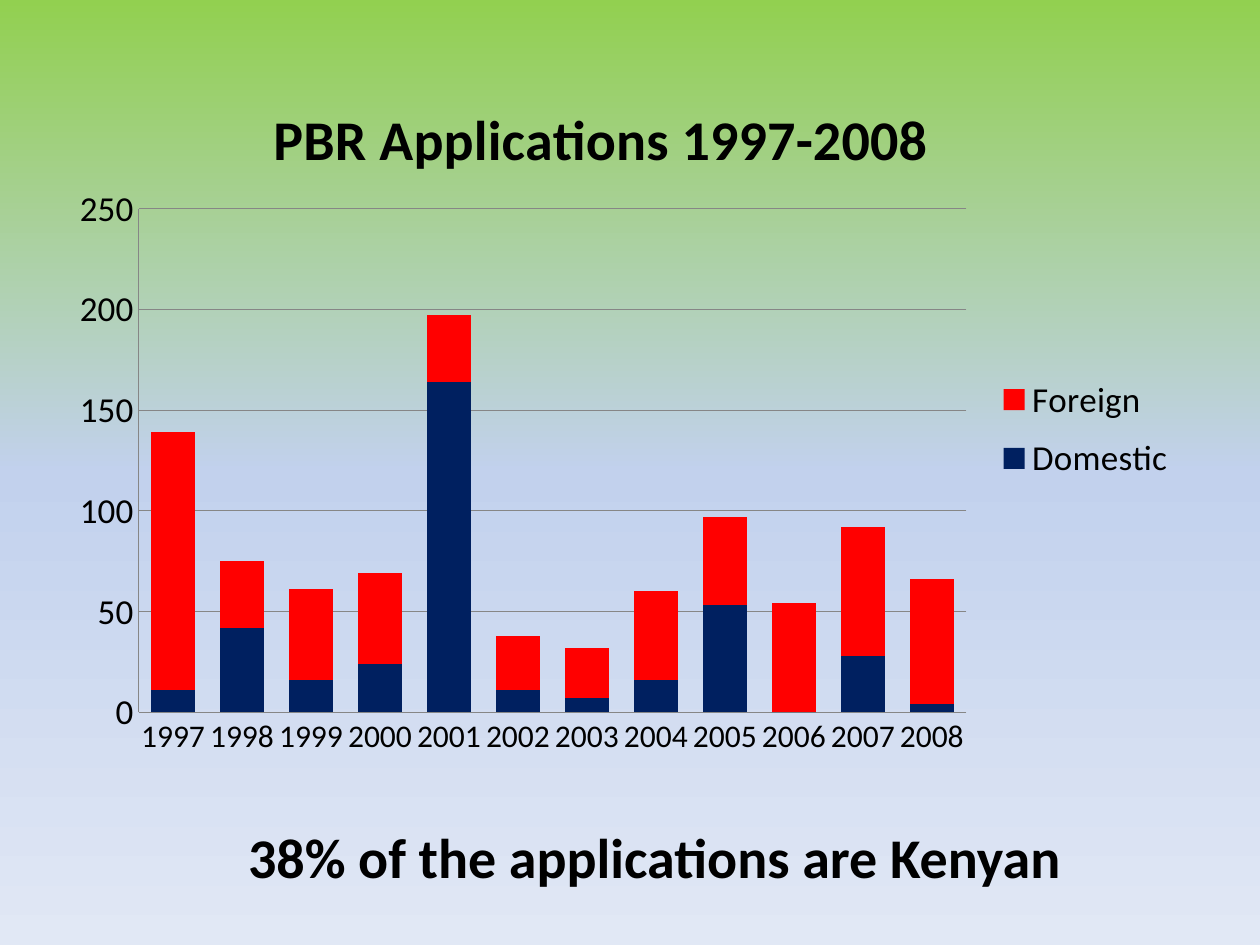
import copy
import pptx
import pptx.chart.data
import pptx.dml.color
import pptx.enum.chart
import pptx.enum.text
import pptx.oxml
import pptx.oxml.ns
import pptx.util

WIDTH, HEIGHT = 10, 7.5
FONT = "Calibri"
COLORS = {"text": "000000", "line": "868686", "Domestic": "002060", "Foreign": "FF0000"}
BACKGROUND = [(0, "92D050"), (0.5, "C2D1ED"), (1, "E1E8F5")]
TITLE = "PBR Applications 1997-2008"
CAPTION = "38% of the applications are Kenyan"
YEARS = [str(year) for year in range(1997, 2009)]
SERIES = {
    "Domestic": [11, 42, 16, 24, 164, 11, 7, 16, 53, 0, 28, 4],
    "Foreign": [128, 33, 45, 45, 33, 27, 25, 44, 44, 54, 64, 62],
}
CHART_BOX = (0.047, 0.073, 0.9, 0.74)
CAPTION_BOX = (0.187, 0.864, 0.671, 0.085)
PLOT_SHARE = {"x": 0.07, "y": 0.2, "w": 0.73, "h": 0.72}
TITLE_SHARE = {"x": 0.18, "y": 0.03}
LEGEND_SHARE = {"x": 0.82, "y": 0.42, "w": 0.17, "h": 0.19}


def rgb(name):
    return pptx.dml.color.RGBColor.from_string(COLORS.get(name, name))


def place(box):
    return [pptx.util.Inches(share * side) for share, side in zip(box, (WIDTH, HEIGHT) * 2)]


def format_font(font, size, bold=False):
    values = {"name": FONT, "size": pptx.util.Pt(size), "bold": bold}
    for attribute, value in values.items():
        setattr(font, attribute, value)
    font.color.rgb = rgb("text")


def set_layout(element, index, shares, inner=False):
    for old in element.findall(pptx.oxml.ns.qn("c:layout")):
        element.remove(old)
    target = '<c:layoutTarget val="inner"/>' if inner else ""
    modes = "".join(f'<c:{key}Mode val="edge"/>' for key in ("x", "y"))
    values = "".join(f'<c:{key} val="{value}"/>' for key, value in shares.items())
    element.insert(index, pptx.oxml.parse_xml(
        f'<c:layout {pptx.oxml.ns.nsdecls("c")}><c:manualLayout>'
        f"{target}{modes}{values}</c:manualLayout></c:layout>"))


def paint_background(slide):
    fill = slide.background.fill
    fill.gradient()
    fill.gradient_angle = 270
    stops = slide.background._cSld.find(".//" + pptx.oxml.ns.qn("a:gsLst"))
    stops.insert(1, copy.deepcopy(stops[0]))
    for stop, (position, color) in zip(fill.gradient_stops, BACKGROUND):
        stop.position = position
        stop.color.rgb = rgb(color)


def add_applications_chart(slide):
    data = pptx.chart.data.CategoryChartData()
    data.categories = YEARS
    for name, values in SERIES.items():
        data.add_series(name, values)
    chart = slide.shapes.add_chart(
        pptx.enum.chart.XL_CHART_TYPE.COLUMN_STACKED, *place(CHART_BOX), data).chart
    format_font(chart.font, 10)

    title_frame = chart.chart_title.text_frame
    title_frame.text = TITLE
    format_font(title_frame.paragraphs[0].runs[0].font, 32, True)
    chart.chart_title.include_text_in_layout = False

    chart.has_legend = True
    chart.legend.position = pptx.enum.chart.XL_LEGEND_POSITION.RIGHT
    chart.legend.include_in_layout = False
    format_font(chart.legend.font, 20)

    for axis, size in ((chart.category_axis, 18), (chart.value_axis, 20)):
        axis.major_tick_mark = pptx.enum.chart.XL_TICK_MARK.NONE
        axis.format.line.color.rgb = rgb("line")
        axis.format.line.width = pptx.util.Pt(0.75)
        format_font(axis.tick_labels.font, size)
    scale = {"minimum_scale": 0, "maximum_scale": 250, "major_unit": 50, "has_major_gridlines": True}
    for attribute, value in scale.items():
        setattr(chart.value_axis, attribute, value)
    gridline = chart.value_axis.major_gridlines.format.line
    gridline.color.rgb = rgb("line")
    gridline.width = pptx.util.Pt(0.75)

    plot = chart.plots[0]
    for attribute, value in {"gap_width": 55, "overlap": 100, "vary_by_categories": False}.items():
        setattr(plot, attribute, value)
    for series in plot.series:
        series.format.fill.solid()
        series.format.fill.fore_color.rgb = rgb(series.name)

    set_layout(chart._chartSpace.chart.plotArea, 0, PLOT_SHARE, inner=True)
    set_layout(chart.chart_title._element, 1, TITLE_SHARE)
    set_layout(chart.legend._element, 1, LEGEND_SHARE)


def add_caption(slide):
    frame = slide.shapes.add_textbox(*place(CAPTION_BOX)).text_frame
    frame.word_wrap = False
    frame.auto_size = pptx.enum.text.MSO_AUTO_SIZE.SHAPE_TO_FIT_TEXT
    frame.text = CAPTION
    format_font(frame.paragraphs[0].runs[0].font, 32, True)


def main():
    presentation = pptx.Presentation()
    presentation.slide_width = pptx.util.Inches(WIDTH)
    presentation.slide_height = pptx.util.Inches(HEIGHT)
    slide = presentation.slides.add_slide(presentation.slide_layouts[6])
    paint_background(slide)
    add_applications_chart(slide)
    add_caption(slide)
    presentation.save("out.pptx")


if __name__ == "__main__":
    main()
